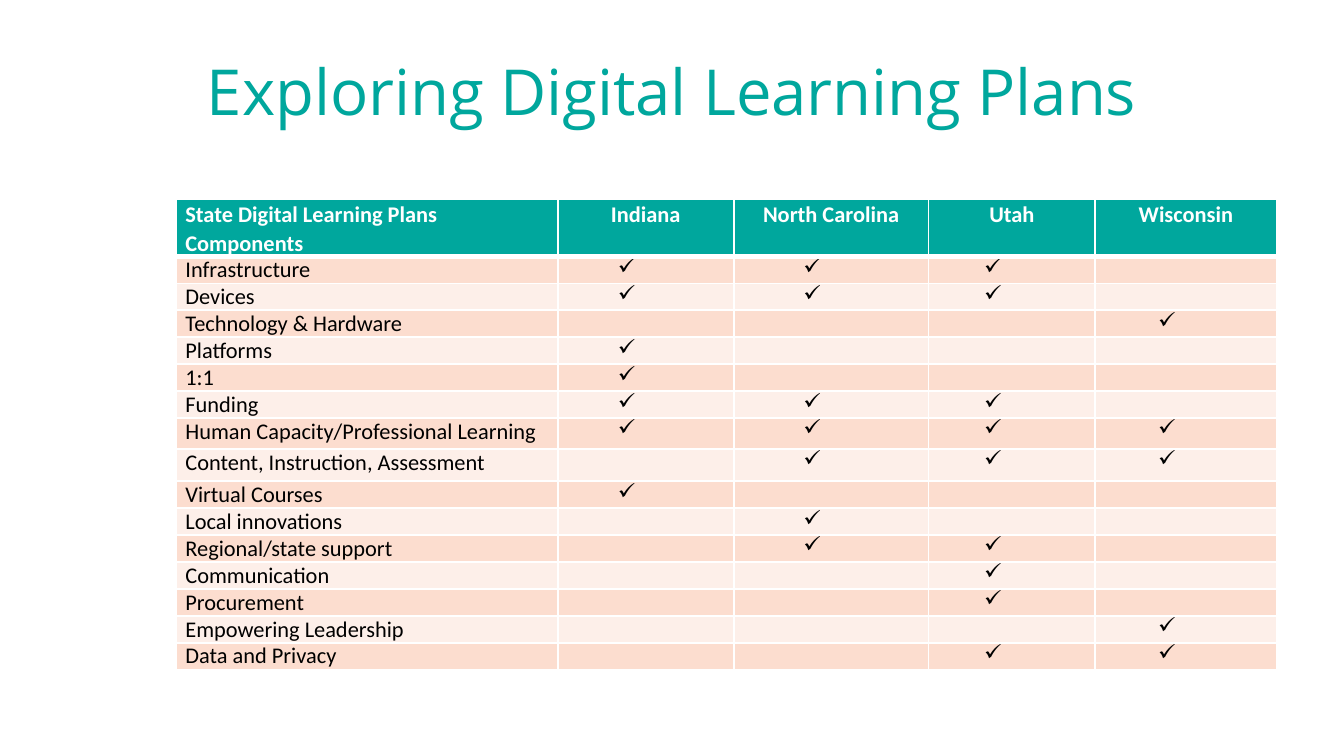
from lxml.etree import SubElement
from pptx import Presentation
from pptx.dml.color import RGBColor
from pptx.enum.text import MSO_ANCHOR as Anchor, PP_ALIGN as Align
from pptx.oxml.ns import qn
from pptx.util import Inches, Pt

TITLE = "Exploring Digital Learning Plans"
HEADERS = ["State Digital Learning Plans Components", "Indiana", "North Carolina", "Utah", "Wisconsin"]
COMPONENTS = [
    ("Infrastructure", "✓✓✓-"),
    ("Devices", "✓✓✓-"),
    ("Technology & Hardware", "---✓"),
    ("Platforms", "✓---"),
    ("1:1", "✓---"),
    ("Funding", "✓✓✓-"),
    ("Human Capacity/Professional Learning", "✓✓✓✓"),
    ("Content, Instruction, Assessment", "-✓✓✓"),
    ("Virtual Courses", "✓---"),
    ("Local innovations", "-✓--"),
    ("Regional/state support", "-✓✓-"),
    ("Communication", "--✓-"),
    ("Procurement", "--✓-"),
    ("Empowering Leadership", "---✓"),
    ("Data and Privacy", "--✓✓"),
]
SLIDE_WIDTH = 10
SLIDE_HEIGHT = SLIDE_WIDTH * 9 / 16
COLUMN_WIDTHS = [2.84, 1.31, 1.45, 1.24, 1.35]
HEADER_HEIGHT, ROW_HEIGHT = 0.37, 0.2
TALL_ROWS = {7: 0.23, 8: 0.24}
TEAL, WHITE, BLACK = "00A79D", "FFFFFF", "000000"
BANDS = ["FDEFE9", "FCDDCF"]
SIDE, BULLET_INDENT = Inches(0.07), Pt(27)


def color(value):
    """Turn a hex string into a colour."""
    return RGBColor.from_string(value)


def apply(target, **values):
    """Set attributes from a dict of format values."""
    for name, value in values.items():
        setattr(target, name, value)


def write(paragraph, text, font, size, ink, bold=False):
    """Add one formatted run to a paragraph."""
    run = paragraph.add_run()
    run.text = text
    apply(run.font, name=font, size=Pt(size), bold=bold)
    run.font.color.rgb = color(ink)


def add_borders(cell, bottom):
    """Draw white lines around a cell."""
    properties = cell._tc.get_or_add_tcPr()
    for side, width in {"L": 1, "R": 1, "T": 1, "B": bottom}.items():
        line = SubElement(properties, qn(f"a:ln{side}"), w=str(Pt(width)))
        SubElement(SubElement(line, qn("a:solidFill")), qn("a:srgbClr"), val=WHITE)


def add_bullet(paragraph, character):
    """Give a paragraph a hanging bullet."""
    properties = paragraph._p.get_or_add_pPr()
    properties.set("marL", str(BULLET_INDENT))
    properties.set("indent", str(-BULLET_INDENT))
    SubElement(properties, qn("a:buChar"), char=character)


def fill_cell(cell, text, row, column):
    """Format one table cell and write its content."""
    header = row == 0
    add_borders(cell, 3 if header else 1)
    cell.fill.solid()
    cell.fill.fore_color.rgb = color(TEAL if header else BANDS[row % 2])
    apply(cell, margin_left=SIDE, margin_right=SIDE, margin_top=0, margin_bottom=0)
    paragraph = cell.text_frame.paragraphs[0]
    apply(paragraph, alignment=Align.CENTER if column else Align.LEFT, space_after=Pt(8))
    if text == "-":
        SubElement(paragraph._p, qn("a:endParaRPr"), sz="1200")
        return
    if text == "✓":
        add_bullet(paragraph, text)
        text = " "
    if header:
        paragraph.line_spacing = 1.07
    write(paragraph, text, "Calibri", 12, WHITE if header else BLACK, header)


def main():
    """Build the slide."""
    presentation = Presentation()
    apply(presentation, slide_width=Inches(SLIDE_WIDTH), slide_height=Inches(SLIDE_HEIGHT))
    slide = presentation.slides.add_slide(presentation.slide_layouts[6])

    title = slide.shapes.add_textbox(Inches(0.5), Inches(0.3), Inches(9), Inches(0.74))
    apply(title.text_frame, word_wrap=True, vertical_anchor=Anchor.MIDDLE)
    paragraph = title.text_frame.paragraphs[0]
    paragraph.alignment = Align.CENTER
    write(paragraph, TITLE, "Open Sans", 34, TEAL)

    rows = [HEADERS] + [[name, *marks] for name, marks in COMPONENTS]
    heights = [HEADER_HEIGHT] + [TALL_ROWS.get(row, ROW_HEIGHT) for row in range(1, len(rows))]
    table = slide.shapes.add_table(
        len(rows), len(HEADERS), Inches(1.31), Inches(1.48),
        Inches(sum(COLUMN_WIDTHS)), Inches(sum(heights))).table
    for column, width in zip(table.columns, COLUMN_WIDTHS):
        column.width = Inches(width)
    for row, (texts, height) in enumerate(zip(rows, heights)):
        table.rows[row].height = Inches(height)
        for column, text in enumerate(texts):
            fill_cell(table.cell(row, column), text, row, column)

    presentation.save("out.pptx")


if __name__ == "__main__":
    main()
